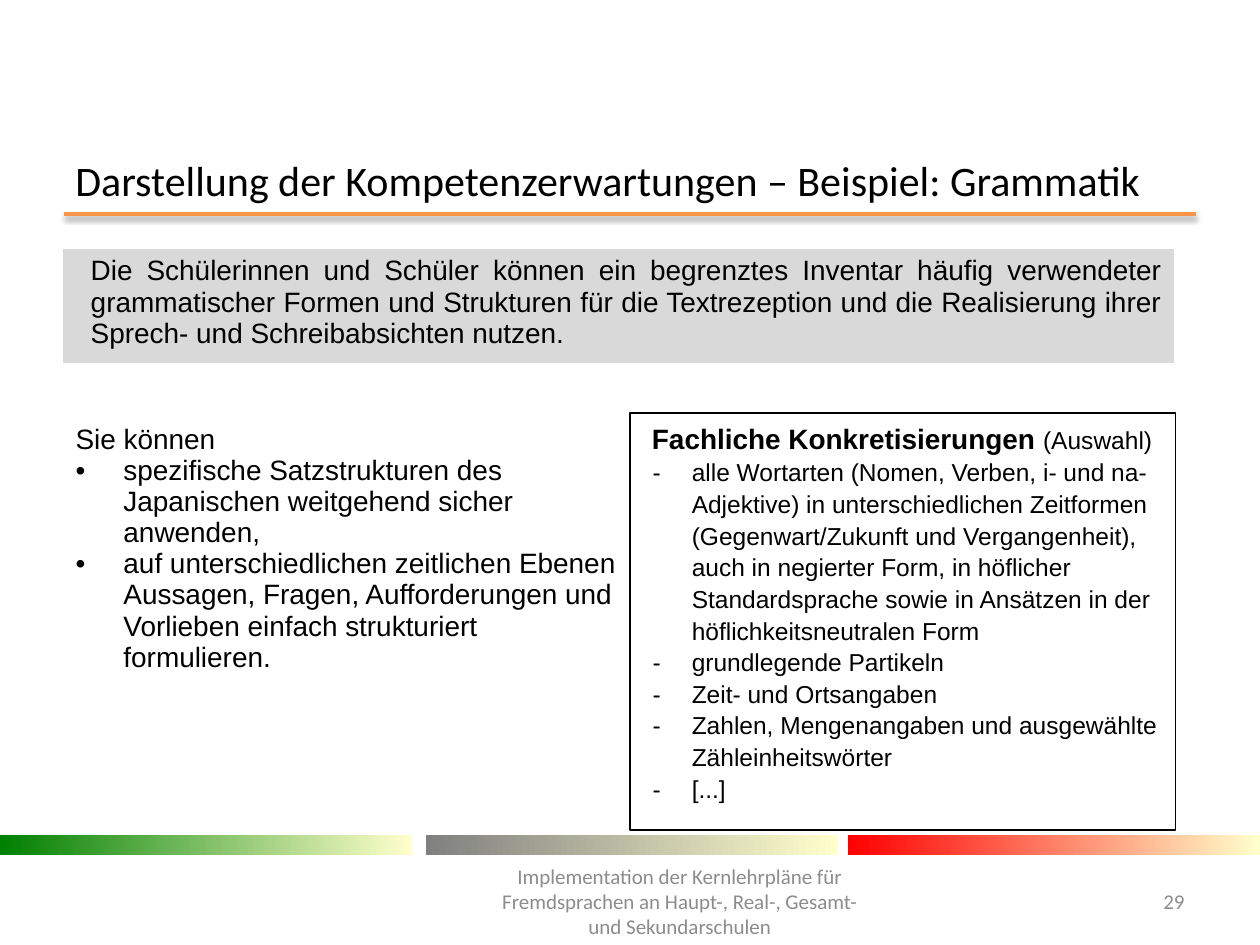
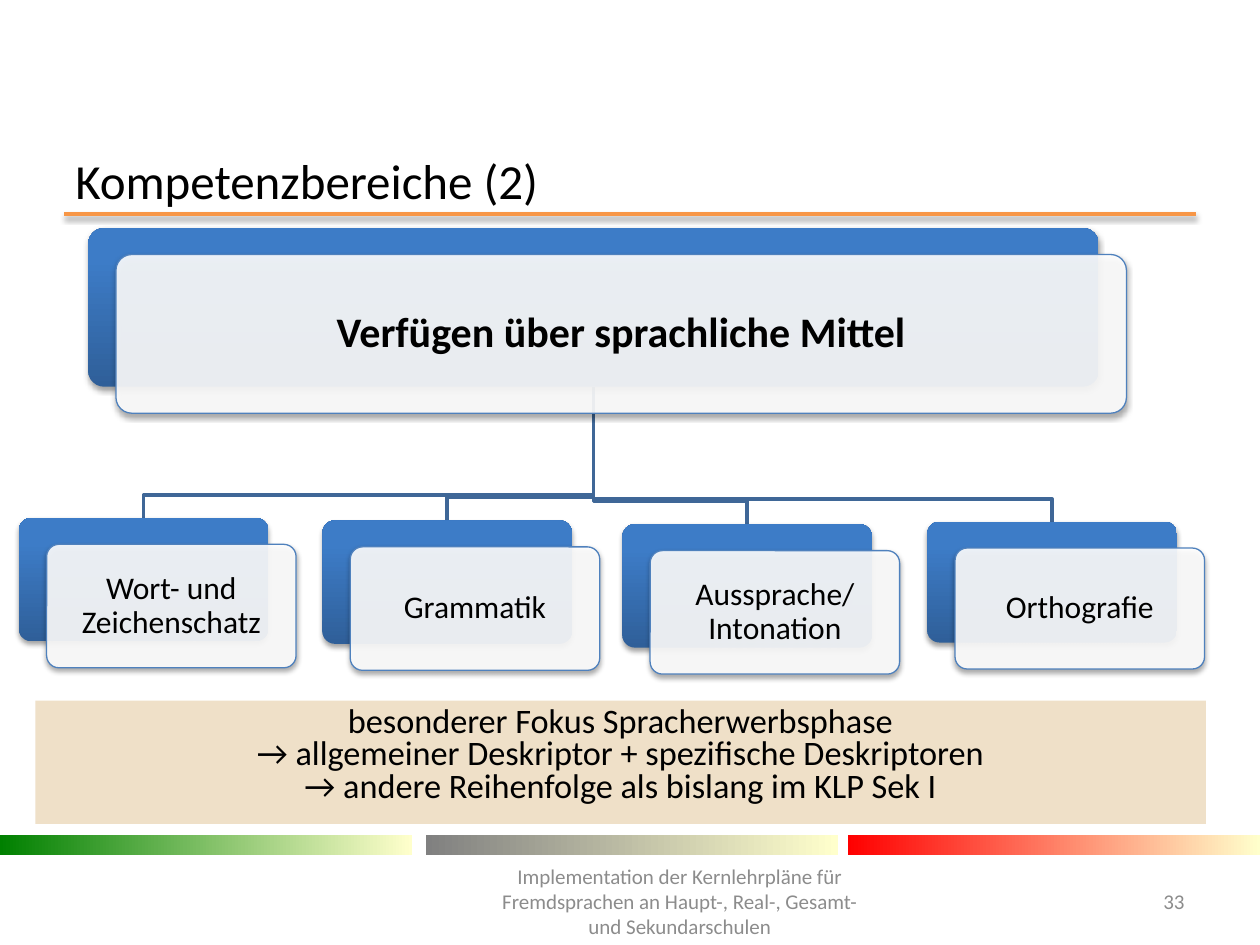
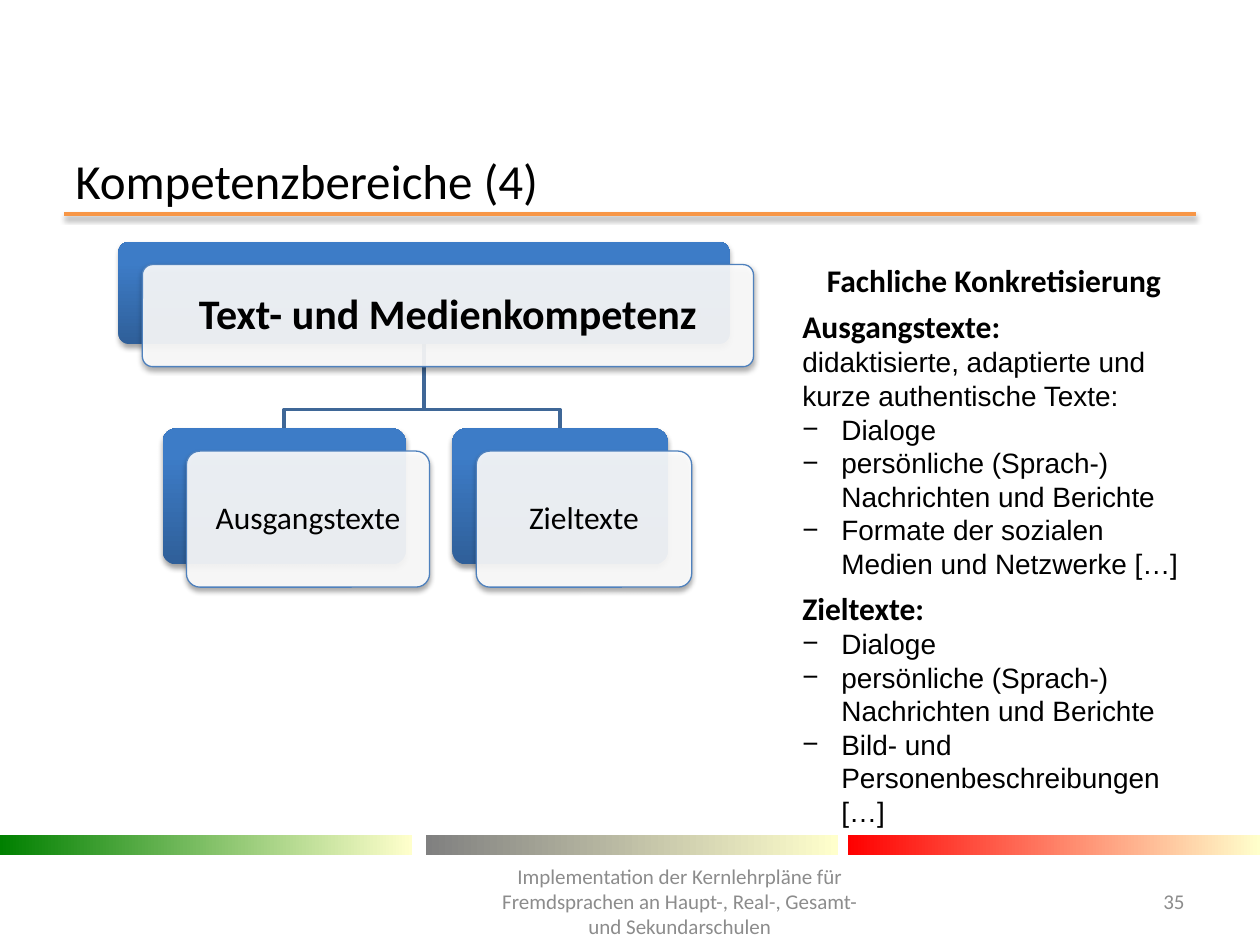
"""Build three slides on competence areas in the language curricula."""
from lxml import etree
from pptx import Presentation
from pptx import util as u
from pptx.dml.color import RGBColor
from pptx.enum import shapes, text
from pptx.oxml.ns import qn

BLACK = RGBColor(0x00, 0x00, 0x00)
WHITE = RGBColor(0xFF, 0xFF, 0xFF)
GREY = RGBColor(0x8C, 0x8C, 0x8C)
SILVER = RGBColor(0xD9, 0xD9, 0xD9)
ORANGE = RGBColor(0xF7, 0x96, 0x46)
CREAM = RGBColor(0xFF, 0xFF, 0xCC)
SAND = RGBColor(0xEF, 0xE0, 0xC8)
DEEP_BLUE = RGBColor(0x2F, 0x5F, 0x99)
BRIGHT_BLUE = RGBColor(0x3D, 0x7C, 0xC7)
EDGE_BLUE = RGBColor(0x4F, 0x81, 0xBD)
BRANCH_BLUE = RGBColor(0x3F, 0x67, 0x97)
BAND_COLOURS = (RGBColor(0x00, 0x80, 0x00), RGBColor(0x80, 0x80, 0x80), RGBColor(0xFF, 0x00, 0x00))
BAND_COLUMNS = (0, 33.8, 67.3)
PLAIN_TABLE = "{2D5ABB26-0587-4C30-8999-92F81FD0307C}"
FOOTER = "Implementation der Kernlehrpläne für Fremdsprachen an Haupt-, Real-, Gesamt- und Sekundarschulen"
LEFT, CENTER, RIGHT, JUSTIFY = (text.PP_ALIGN.LEFT, text.PP_ALIGN.CENTER,
                                text.PP_ALIGN.RIGHT, text.PP_ALIGN.JUSTIFY)
MIDDLE, TOP = text.MSO_ANCHOR.MIDDLE, text.MSO_ANCHOR.TOP

deck = Presentation()
deck.slide_width, deck.slide_height = u.Inches(10), u.Inches(7.5)
COLUMN, ROW = deck.slide_width // 100, deck.slide_height // 75


def write(frame, words, para=None, size=16, font="Arial", color=BLACK, bold=False, align=LEFT,
          anchor=None, spacing=None, before=0, bullet=None, indent=0, hanging=0):
    """Add a paragraph to a text frame, or a span to a given paragraph."""
    frame.word_wrap = True
    if anchor is not None:
        frame.vertical_anchor = anchor
    if para is None:
        para = frame.paragraphs[0] if not frame.text else frame.add_paragraph()
        para.alignment = align
        if spacing:
            para.line_spacing = spacing
        if before:
            para.space_before = u.Pt(before)
        layout = para._p.get_or_add_pPr()
        layout.set("marL", str(int(indent * COLUMN)))
        layout.set("indent", str(int(-hanging * COLUMN)))
        if bullet:
            etree.SubElement(layout, qn("a:buFont"), typeface=font)
            etree.SubElement(layout, qn("a:buChar"), char=bullet)
    for number, line in enumerate(words.split("\n")):
        if number:
            para.add_line_break()
        span = para.add_run()
        span.text = line
        span.font.size, span.font.name, span.font.bold = u.Pt(size), font, bold
        span.font.color.rgb = color
    return para


def finish(item, fill=None, stops=None, angle=0, reach=1, opacity=None, line=None, weight=1, shadow=False):
    """Set the fill, outline and shadow of a shape or connector."""
    if stops:
        item.fill.gradient()
        item.fill.gradient_angle = angle
        for stop, color, position in zip(item.fill.gradient_stops, stops, (0, reach)):
            stop.color.rgb, stop.position = color, position
    elif fill is not None:
        item.fill.solid()
        item.fill.fore_color.rgb = fill
    elif hasattr(item, "fill"):
        item.fill.background()
    properties = item.element.spPr
    if opacity:
        etree.SubElement(properties.find(".//" + qn("a:srgbClr")), qn("a:alpha"), val=str(opacity * 1000))
    if line is None:
        item.line.fill.background()
    else:
        item.line.color.rgb, item.line.width = line, u.Pt(weight)
    effects = etree.SubElement(properties, qn("a:effectLst"))
    if shadow:
        cast = etree.SubElement(effects, qn("a:outerShdw"), blurRad=str(u.Pt(3.1)), dist=str(u.Pt(1.8)),
                                dir="5400000", rotWithShape="0")
        shade = etree.SubElement(cast, qn("a:srgbClr"), val=str(BLACK))
        etree.SubElement(shade, qn("a:alpha"), val="36000")


pages = []
for title, title_size, number in (
    ("Darstellung der Kompetenzerwartungen – Beispiel: Grammatik", 24, "29"),
    ("Kompetenzbereiche (2)", 28, "33"),
    ("Kompetenzbereiche (4)", 28, "35"),
):
    page = deck.slides.add_slide(deck.slide_layouts[6])
    pages.append(page)
    rule = page.shapes.add_connector(shapes.MSO_CONNECTOR.STRAIGHT, int(5.1 * COLUMN), 17 * ROW,
                                     int(94.9 * COLUMN), 17 * ROW)
    finish(rule, line=ORANGE, weight=2, shadow=True)
    for column, color in zip(BAND_COLUMNS, BAND_COLOURS):
        band = page.shapes.add_shape(shapes.MSO_SHAPE.RECTANGLE, int(column * COLUMN), int(66.3 * ROW),
                                     int(32.7 * COLUMN), int(1.6 * ROW))
        finish(band, stops=(color, CREAM))
    for words, column, row, width, height, size, color, align in (
        (title, 5, 12.3, 90, 3.9, title_size, BLACK, LEFT),
        (FOOTER, 38.2, 69.5, 31.5, 4, 12, GREY, CENTER),
        (number, 88.6, 69.5, 6.4, 4, 12, GREY, RIGHT),
    ):
        box = page.shapes.add_textbox(int(column * COLUMN), int(row * ROW), int(width * COLUMN), int(height * ROW))
        write(box.text_frame, words, size=size, font="Calibri", color=color, align=align, anchor=MIDDLE)

grammar_page, means_page, media_page = pages

holder = grammar_page.shapes.add_table(3, 2, 5 * COLUMN, int(19.8 * ROW), int(88.2 * COLUMN), int(48.5 * ROW))
table = holder.table
holder.element.find(".//" + qn("a:tableStyleId")).text = PLAIN_TABLE
for column, width in zip(table.columns, (45, 43.2)):
    column.width = int(width * COLUMN)
for row, height, fill in zip(table.rows, (7.8, 4, 36.7), (SILVER, WHITE, None)):
    row.height = int(height * ROW)
    for cell in row.cells:
        if fill is None:
            cell.fill.background()
        else:
            cell.fill.solid()
            cell.fill.fore_color.rgb = fill
for row in (0, 1):
    table.cell(row, 0).merge(table.cell(row, 1))

write(table.cell(0, 0).text_frame,
      "Die Schülerinnen und Schüler können ein begrenztes Inventar häufig verwendeter grammatischer Formen "
      "und Strukturen für die Textrezeption und die Realisierung ihrer Sprech- und Schreibabsichten nutzen.",
      align=JUSTIFY, indent=1.2)
skills = table.cell(2, 0).text_frame
write(skills, "Sie können", spacing=1.15)
for words in (
    "spezifische Satzstrukturen des Japanischen weitgehend sicher anwenden,",
    "auf unterschiedlichen zeitlichen Ebenen Aussagen, Fragen, Aufforderungen und Vorlieben einfach "
    "strukturiert formulieren.",
):
    write(skills, words, bullet="•", indent=3.8, hanging=3.8)
details = table.cell(2, 1).text_frame
heading = write(details, "Fachliche Konkretisierungen ", bold=True, align=CENTER, spacing=1.15)
write(details, "(Auswahl)", para=heading, size=14)
for words in (
    "alle Wortarten (Nomen, Verben, i- und na-Adjektive) in unterschiedlichen Zeitformen "
    "(Gegenwart/Zukunft und Vergangenheit), auch in negierter Form, in höflicher Standardsprache "
    "sowie in Ansätzen in der höflichkeitsneutralen Form",
    "grundlegende Partikeln",
    "Zeit- und Ortsangaben",
    "Zahlen, Mengenangaben und ausgewählte Zähleinheitswörter",
    "[...]",
):
    write(details, words, size=14, spacing=1.15, bullet="-", indent=3.9, hanging=3.1)
outline = grammar_page.shapes.add_shape(shapes.MSO_SHAPE.RECTANGLE, 50 * COLUMN, int(32.8 * ROW),
                                        int(43.3 * COLUMN), int(33.1 * ROW))
finish(outline, line=BLACK)

for page, offset, drop, root, leaves in (
    (means_page, (2.2, 2.1), 1.8, ("Verfügen über sprachliche Mittel", 7, 18.1, 80.2, 12.6), (
        ("Wort- und Zeichenschatz", 1.5, 41.1, 19.8, 9.8),
        ("Grammatik", 25.6, 41.3, 19.8, 9.8),
        ("Aussprache/ Intonation", 49.4, 41.6, 19.8, 9.8),
        ("Orthografie", 73.6, 41.4, 19.8, 9.6))),
    (media_page, (1.9, 1.8), 1.5, ("Text- und Medienkompetenz", 9.4, 19.2, 48.5, 8.1), (
        ("Ausgangstexte", 12.9, 34, 19.3, 10.8),
        ("Zieltexte", 35.9, 34, 17.1, 10.8))),
):
    label, column, row, width, height = root
    stem, base = column + width / 2, row + height
    for label, column, row, width, height in reversed(leaves):
        middle = column + width / 2
        builder = page.shapes.build_freeform(int(stem * COLUMN), int(base * ROW))
        corners = ((stem, row - drop), (middle, row - drop), (middle, row))
        builder.add_line_segments([(int(x * COLUMN), int(y * ROW)) for x, y in corners], close=False)
        finish(builder.convert_to_shape(), line=BRANCH_BLUE, weight=2)
    for card in (root, *leaves):
        label, column, row, width, height = card
        back, front = [
            page.shapes.add_shape(shapes.MSO_SHAPE.ROUNDED_RECTANGLE, int((column + across) * COLUMN),
                                  int((row + down) * ROW), int(width * COLUMN), int(height * ROW))
            for across, down in ((0, 0), offset)]
        back.adjustments[0] = front.adjustments[0] = 0.1
        finish(back, stops=(DEEP_BLUE, BRIGHT_BLUE), angle=90, reach=0.8, shadow=True)
        finish(front, fill=WHITE, opacity=90, line=EDGE_BLUE, weight=0.75, shadow=True)
        write(front.text_frame, label, size=24 if card is root else 18, font="Calibri",
              bold=card is root, align=CENTER, anchor=MIDDLE, spacing=0.9)

focus = means_page.shapes.add_shape(shapes.MSO_SHAPE.RECTANGLE, int(2.8 * COLUMN), int(55.6 * ROW),
                                    int(92.9 * COLUMN), int(9.8 * ROW))
finish(focus, fill=SAND)
for words in (
    "besonderer Fokus Spracherwerbsphase\n→ allgemeiner Deskriptor + spezifische Deskriptoren",
    "→ andere Reihenfolge als bislang im KLP Sek I",
):
    write(focus.text_frame, words, size=19.6, font="Calibri", align=CENTER, anchor=TOP, spacing=0.8)

box = media_page.shapes.add_textbox(int(62.7 * COLUMN), int(20.2 * ROW), int(32.4 * COLUMN), int(46.4 * ROW))
examples = box.text_frame
write(examples, "Fachliche Konkretisierung", size=18, font="Calibri", bold=True, align=CENTER)
for heading, lead, items in (
    ("Ausgangstexte:", "didaktisierte, adaptierte und kurze authentische Texte:",
     ("Dialoge", "persönliche (Sprach-) Nachrichten und Berichte",
      "Formate der sozialen Medien und Netzwerke […]")),
    ("Zieltexte:", None,
     ("Dialoge", "persönliche (Sprach-) Nachrichten und Berichte",
      "Bild- und Personenbeschreibungen […]")),
):
    write(examples, heading, size=18, font="Calibri", bold=True, before=5)
    if lead:
        write(examples, lead)
    for words in items:
        write(examples, words, bullet="−", indent=3.1, hanging=3.1)

deck.save("out.pptx")
